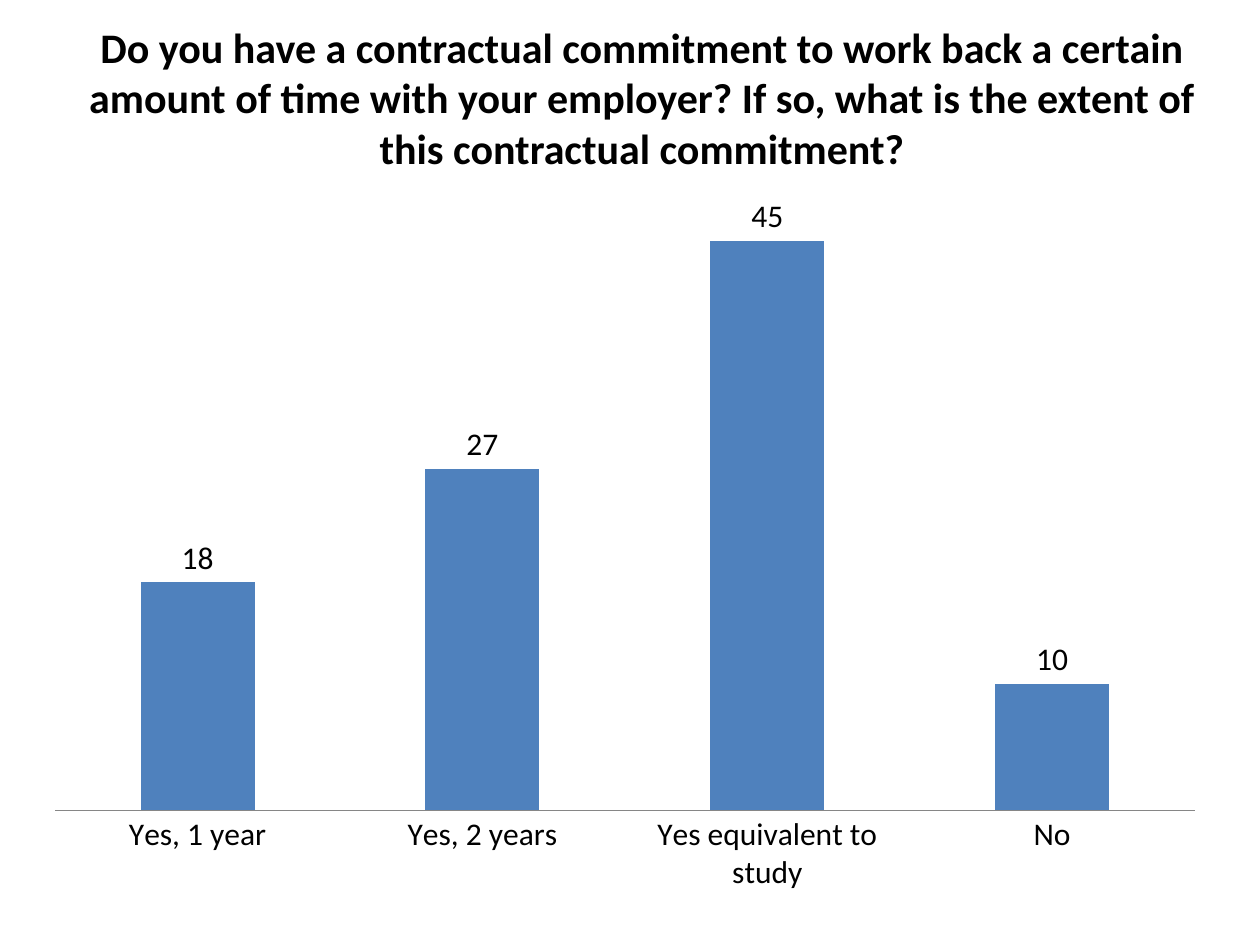
from lxml.etree import SubElement
from pptx import Presentation
from pptx.chart.data import CategoryChartData
from pptx.dml.color import RGBColor
from pptx.enum.chart import XL_CHART_TYPE, XL_LABEL_POSITION, XL_TICK_MARK
from pptx.enum.text import PP_ALIGN
from pptx.oxml.ns import qn
from pptx.util import Pt

BLACK = RGBColor(0x00, 0x00, 0x00)
BLUE = RGBColor(0x4F, 0x81, 0xBD)
GREY = RGBColor(0x86, 0x86, 0x86)
FONT = "Calibri"

deck = Presentation()
deck.slide_width, deck.slide_height = Pt(720), Pt(540)
page = deck.slides.add_slide(deck.slide_layouts[6])

# Column chart of the answers
answers = {"Yes, 1 year": 18, "Yes, 2 years": 27, "Yes equivalent to study": 45, "No": 10}
data = CategoryChartData()
data.categories = list(answers)
data.add_series("Series 1", list(answers.values()))
chart = page.shapes.add_chart(
    XL_CHART_TYPE.COLUMN_CLUSTERED, Pt(18), Pt(92.88), Pt(678.24), Pt(425.52), data
).chart
chart.has_title = False
chart.has_legend = False
chart.font.name, chart.font.size = FONT, Pt(18)
chart.font.color.rgb = BLACK

# Columns and their values
plot = chart.plots[0]
plot.gap_width = 150
plot.vary_by_categories = False
fill = plot.series[0].format.fill
fill.solid()
fill.fore_color.rgb = BLUE
plot.has_data_labels = True
plot.data_labels.show_value = True
plot.data_labels.position = XL_LABEL_POSITION.OUTSIDE_END

# Axes
value_axis = chart.value_axis
value_axis.minimum_scale, value_axis.maximum_scale = 0, 50
value_axis.has_major_gridlines = False
value_axis.visible = False
category_axis = chart.category_axis
category_axis.major_tick_mark = XL_TICK_MARK.NONE
category_axis.format.line.color.rgb = GREY
category_axis.format.line.width = Pt(0.75)

# Fixed plot area, as shares of the chart frame
plot_area = plot_layout = chart.element.find(".//" + qn("c:plotArea"))
plot_layout = plot_area.find(qn("c:layout"))
if plot_layout is None:
    plot_layout = SubElement(plot_area, qn("c:layout"))
    plot_area.insert(0, plot_layout)
manual = SubElement(plot_layout, qn("c:manualLayout"))
settings = {"layoutTarget": "inner", "xMode": "edge", "yMode": "edge",
            "x": 0.02, "y": 0.02, "w": 0.96, "h": 0.85}
for name, value in settings.items():
    SubElement(manual, qn("c:" + name)).set("val", str(value))

# Question above the chart
box = page.shapes.add_textbox(Pt(28.08), Pt(8.64), Pt(677.52), Pt(94.32))
box.text_frame.word_wrap = True
para = box.text_frame.paragraphs[0]
para.alignment = PP_ALIGN.CENTER
span = para.add_run()
span.text = (
    "Do you have a contractual commitment to work back a certain amount of time "
    "with your employer? If so, what is the extent of this contractual commitment?"
)
for name, value in {"name": FONT, "size": Pt(24), "bold": True}.items():
    setattr(span.font, name, value)
span.font.color.rgb = BLACK

deck.save("out.pptx")
